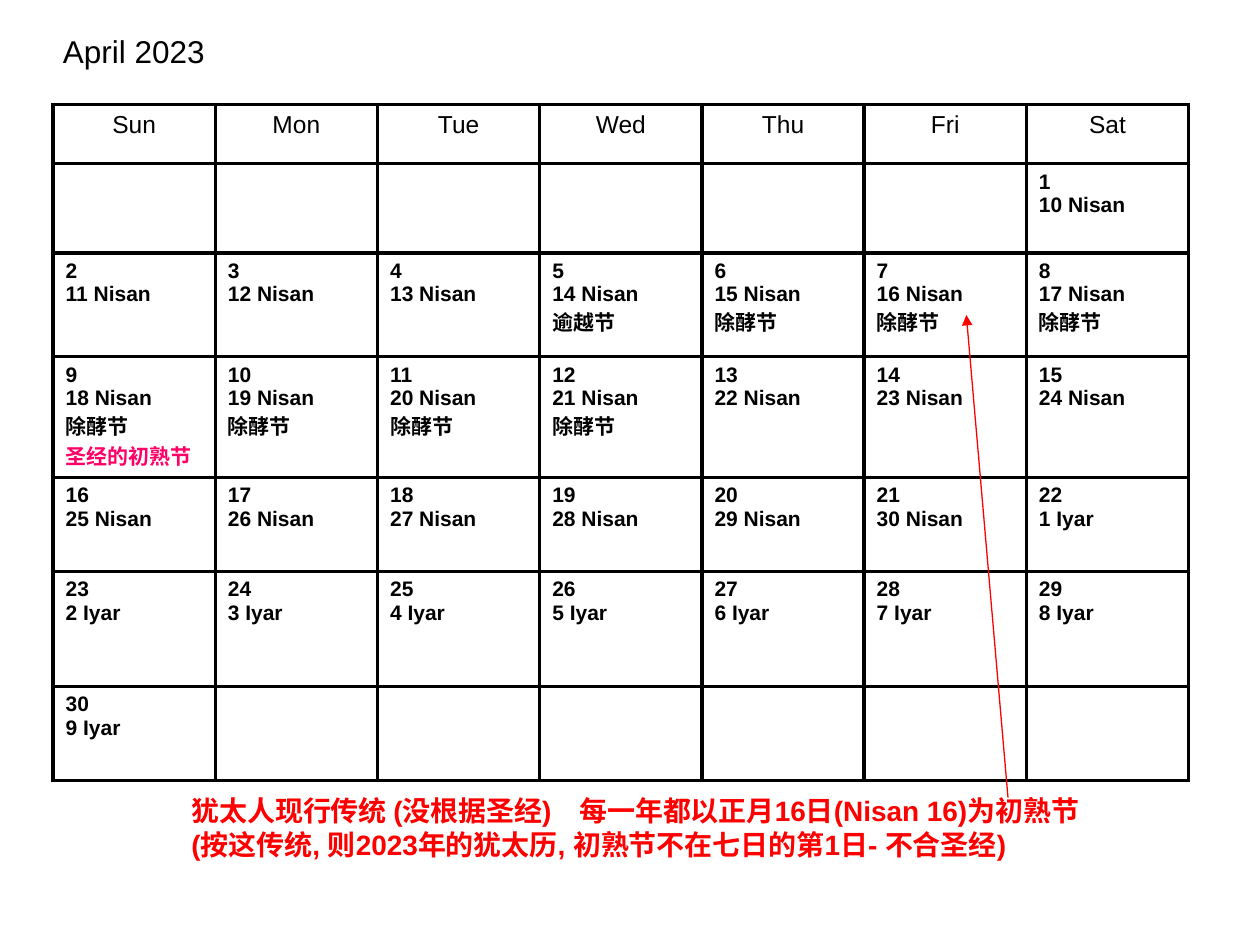
from dataclasses import dataclass

from lxml import etree
from pptx import Presentation
from pptx.dml.color import RGBColor
from pptx.enum.shapes import MSO_CONNECTOR
from pptx.enum.text import MSO_AUTO_SIZE, PP_ALIGN
from pptx.oxml.ns import qn
from pptx.util import Cm, Pt

BLACK = RGBColor(0x00, 0x00, 0x00)
RED = RGBColor(0xFF, 0x00, 0x00)
PINK = RGBColor(0xFF, 0x00, 0x66)
STRAIGHT = MSO_CONNECTOR.STRAIGHT
CENTER, LEFT = PP_ALIGN.CENTER, PP_ALIGN.LEFT
FIT_SHAPE = MSO_AUTO_SIZE.SHAPE_TO_FIT_TEXT
FONT = "Arial"

WEEKDAYS = ["Sun", "Mon", "Tue", "Wed", "Thu", "Fri", "Sat"]
ROW_HEIGHTS = [1.19, 1.8, 2.09, 2.42, 1.9, 2.32, 1.89]
COLUMN_WIDTH = 3.27
HANGING = Cm(0.97)
FIRST_COLUMN = 6      # 1 April falls on a Saturday
DAYS_IN_APRIL = 30
NISAN_OFFSET = 9      # 1 April is 10 Nisan
DAYS_IN_NISAN = 30


@dataclass
class Line:
    text: str
    size: float = 12
    bold: bool = True
    color: RGBColor = BLACK


@dataclass
class TextBox:
    left: float
    top: float
    width: float
    height: float
    lines: list[Line]
    wrap: bool


def hebrew_date(day: int) -> str:
    nisan = day + NISAN_OFFSET
    if nisan <= DAYS_IN_NISAN:
        return f"{nisan} Nisan"
    return f"{nisan - DAYS_IN_NISAN} Iyar"


def day_lines(day: int) -> list[Line]:
    lines = [Line(str(day)), Line(hebrew_date(day))]
    if day == 5:
        lines.append(Line("逾越节"))
    if 6 <= day <= 12:
        lines.append(Line("除酵节"))
    if day == 9:
        lines.append(Line("圣经的初熟节", color=PINK))
    return lines


def write_lines(frame, lines: list[Line], align=LEFT, hanging: int = 0) -> None:
    for index, line in enumerate(lines):
        paragraph = frame.add_paragraph() if index else frame.paragraphs[0]
        paragraph.alignment = align
        if hanging:
            properties = paragraph._p.get_or_add_pPr()
            properties.set("marL", str(hanging))
            properties.set("indent", str(-hanging))
        run = paragraph.add_run()
        run.text = line.text
        run.font.name = FONT
        run.font.size = Pt(line.size)
        run.font.bold = line.bold
        run.font.color.rgb = line.color


def style_cell(cell) -> None:
    properties = cell._tc.get_or_add_tcPr()
    for side in ("a:lnL", "a:lnR", "a:lnT", "a:lnB"):
        border = etree.SubElement(properties, qn(side), w=str(Pt(2.25)))
        fill = etree.SubElement(border, qn("a:solidFill"))
        etree.SubElement(fill, qn("a:srgbClr"), val=str(BLACK))
    cell.fill.background()


def add_calendar(slide) -> None:
    table = slide.shapes.add_table(
        len(ROW_HEIGHTS), len(WEEKDAYS), Cm(1.07), Cm(2.11),
        Cm(COLUMN_WIDTH * len(WEEKDAYS)), Cm(sum(ROW_HEIGHTS))).table
    table.first_row = False
    table.horz_banding = False
    for column in table.columns:
        column.width = Cm(COLUMN_WIDTH)
    for row, height in zip(table.rows, ROW_HEIGHTS):
        row.height = Cm(height)
    for cell in table.iter_cells():
        style_cell(cell)

    # Weekday header
    for column, weekday in enumerate(WEEKDAYS):
        write_lines(table.cell(0, column).text_frame,
                    [Line(weekday, 14, False)], CENTER, HANGING)

    # Days of the month
    for day in range(1, DAYS_IN_APRIL + 1):
        week, column = divmod(FIRST_COLUMN + day - 1, len(WEEKDAYS))
        write_lines(table.cell(week + 1, column).text_frame,
                    day_lines(day), hanging=HANGING)


def add_text(slide, box: TextBox) -> None:
    frame = slide.shapes.add_textbox(
        Cm(box.left), Cm(box.top), Cm(box.width), Cm(box.height)).text_frame
    frame.word_wrap = box.wrap
    frame.auto_size = FIT_SHAPE
    frame.margin_right = 0 if box.wrap else Cm(0.25)
    write_lines(frame, box.lines)


def add_arrow(slide) -> None:
    arrow = slide.shapes.add_connector(
        STRAIGHT, Cm(20.32), Cm(16.08), Cm(19.48), Cm(6.35))
    arrow.line.color.rgb = RED
    arrow.line.width = Pt(0.75)
    etree.SubElement(arrow.line._get_or_add_ln(), qn("a:tailEnd"), type="triangle")
    etree.SubElement(arrow._element.spPr, qn("a:effectLst"))


def main() -> None:
    presentation = Presentation()
    presentation.slide_width = Cm(25.4)
    presentation.slide_height = Cm(19.05)
    slide = presentation.slides.add_slide(presentation.slide_layouts[6])

    add_calendar(slide)

    # Month title
    add_text(slide, TextBox(1.02, 0.53, 3.38, 1.02,
                            [Line("April 2023", 18, False)], False))

    # Remark on the tradition, with an arrow to 16 Nisan
    remark = [
        "犹太人现行传统 (没根据圣经)　每一年都以正月16日(Nisan 16)为初熟节",
        "(按这传统, 则2023年的犹太历, 初熟节不在七日的第1日- 不合圣经)",
    ]
    add_text(slide, TextBox(3.61, 15.88, 19.5, 1.63,
                            [Line(text, 16, True, RED) for text in remark], True))
    add_arrow(slide)

    presentation.save("out.pptx")


if __name__ == "__main__":
    main()
